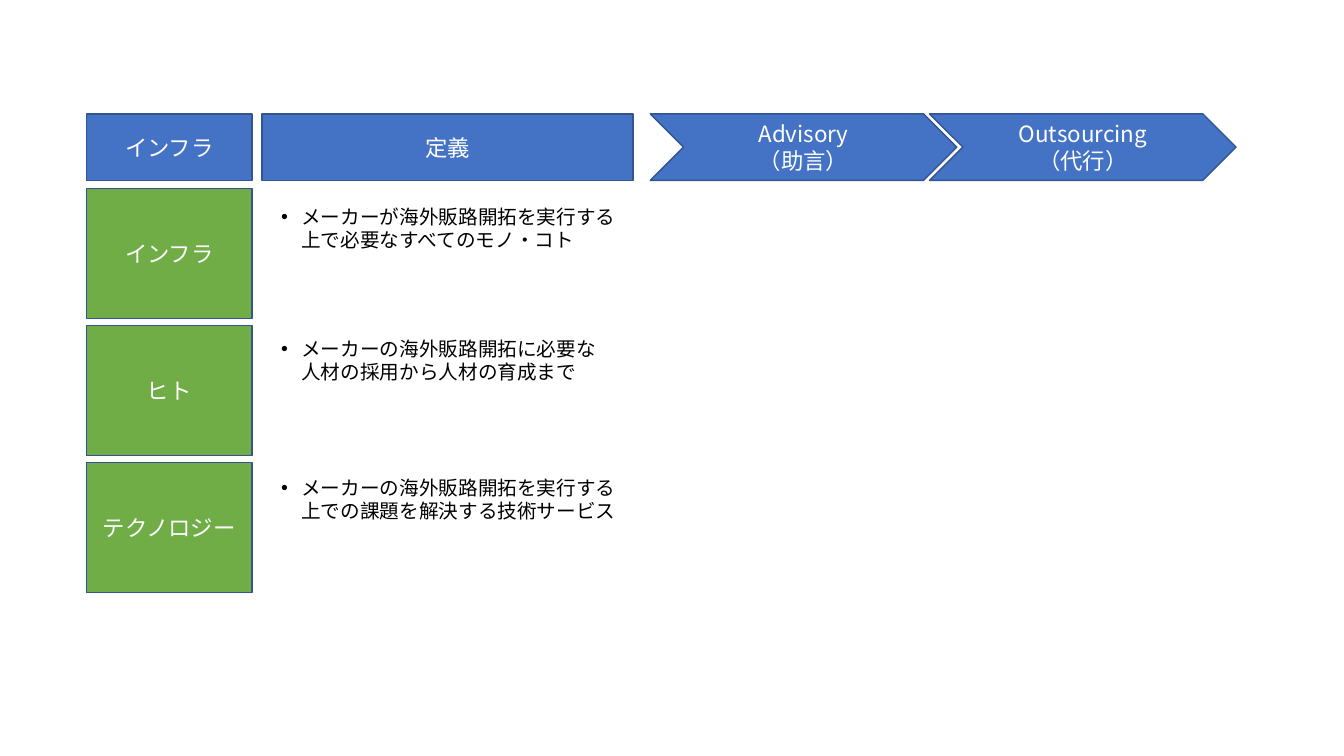
from lxml.etree import SubElement
from pptx import Presentation
from pptx.dml.color import RGBColor
from pptx.enum.shapes import MSO_SHAPE as Preset
from pptx.enum.text import MSO_ANCHOR as Anchor, MSO_AUTO_SIZE as AutoSize, PP_ALIGN as Align
from pptx.oxml.ns import qn
from pptx.util import Inches, Pt

FONT = "Noto Sans CJK JP"
BLUE, GREEN, OUTLINE = "4472C4", "70AD47", "325491"
WHITE, BLACK = "FFFFFF", "000000"

LEFT, HEADER_TOP, HEADER_HEIGHT = 0.86, 1.13, 0.66
LABEL_WIDTH, LABEL_HEIGHT = 1.64, 1.29
ROWS_TOP, ROW_PITCH = 1.87, 1.36
DEFINITION_LEFT, DEFINITION_WIDTH = 2.6, 3.68
STAGES_LEFT, STAGE_WIDTH, STAGE_PITCH = 6.45, 3.04, 2.77

STAGES = ["Advisory\n（助言）", "Outsourcing\n（代行）"]
# Label, definition, then the top and width of the definition
ROWS = [
    ("インフラ", "メーカーが海外販路開拓を実行する\n上で必要なすべてのモノ・コト", 1.98, 3.54),
    ("ヒト", "メーカーの海外販路開拓に必要な\n人材の採用から人材の育成まで", 3.29, 3.35),
    ("テクノロジー", "メーカーの海外販路開拓を実行する\n上での課題を解決する技術サービス", 4.67, 3.54),
]


def rgb(hex_color):
    return RGBColor.from_string(hex_color)


def format_runs(paragraph, size, color):
    """Style every run, for Latin and East Asian letters alike."""
    for run in paragraph.runs:
        for name, value in {"size": Pt(size), "name": FONT}.items():
            setattr(run.font, name, value)
        run.font.color.rgb = rgb(color)
        SubElement(run.font._element, qn("a:ea"), typeface=FONT)


def add_block(slide, preset, box, text, fill):
    """Add an outlined shape with centred white text."""
    shape = slide.shapes.add_shape(preset, *map(Inches, box))
    shape.shadow.inherit = False
    shape.fill.solid()
    shape.fill.fore_color.rgb = rgb(fill)
    shape.line.color.rgb = rgb(OUTLINE)
    shape.line.width = Pt(1)
    frame = shape.text_frame
    frame.text = text
    frame.vertical_anchor = Anchor.MIDDLE
    for paragraph in frame.paragraphs:
        paragraph.alignment = Align.CENTER
        format_runs(paragraph, 16, WHITE)


def add_definition(slide, box, text):
    """Add a bulleted definition whose lines break where the text says."""
    frame = slide.shapes.add_textbox(*map(Inches, box)).text_frame
    for name, value in {"word_wrap": False, "auto_size": AutoSize.SHAPE_TO_FIT_TEXT}.items():
        setattr(frame, name, value)
    paragraph = frame.paragraphs[0]
    paragraph.text = text
    properties = paragraph._p.get_or_add_pPr()
    properties.set("marL", str(Inches(0.2)))
    properties.set("indent", str(-Inches(0.2)))
    SubElement(properties, qn("a:buFont"), typeface="Arial")
    SubElement(properties, qn("a:buChar"), char="•")
    format_runs(paragraph, 14, BLACK)


def add_header(slide, top, height):
    add_block(slide, Preset.RECTANGLE, (LEFT, top, LABEL_WIDTH, height), "インフラ", BLUE)
    add_block(slide, Preset.RECTANGLE, (DEFINITION_LEFT, top, DEFINITION_WIDTH, height), "定義", BLUE)
    for index, stage in enumerate(STAGES):
        left = STAGES_LEFT + index * STAGE_PITCH
        add_block(slide, Preset.CHEVRON, (left, top, STAGE_WIDTH, height), stage, BLUE)


def add_rows(slide, left, top):
    for index, (label, definition, text_top, text_width) in enumerate(ROWS):
        box = (left, top + index * ROW_PITCH, LABEL_WIDTH, LABEL_HEIGHT)
        add_block(slide, Preset.RECTANGLE, box, label, GREEN)
        add_definition(slide, (DEFINITION_LEFT + 0.09, text_top, text_width, 0.57), definition)


def main():
    presentation = Presentation()
    presentation.slide_width = Inches(13.33)
    presentation.slide_height = Inches(7.5)
    slide = presentation.slides.add_slide(presentation.slide_layouts[6])
    add_rows(slide, LEFT, ROWS_TOP)
    add_header(slide, HEADER_TOP, HEADER_HEIGHT)
    presentation.save("out.pptx")


if __name__ == "__main__":
    main()
